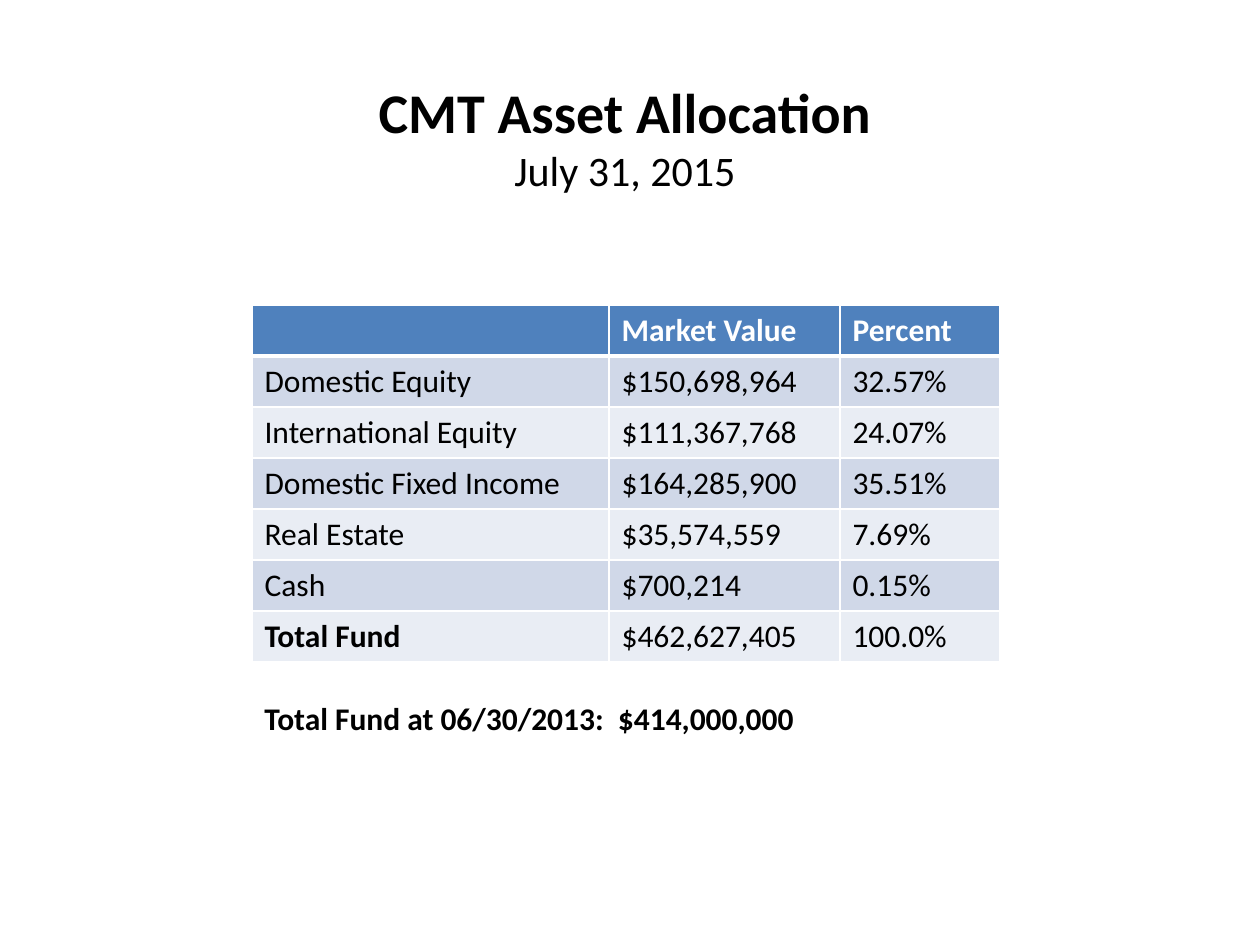
"""Build the CMT asset allocation slide with its title, fund table and closing total."""
from dataclasses import dataclass

from lxml import etree
from pptx import Presentation
from pptx.dml.color import RGBColor
from pptx.enum.text import MSO_ANCHOR, PP_ALIGN
from pptx.oxml.ns import qn
from pptx.util import Pt

CENTER = PP_ALIGN.CENTER
MIDDLE = MSO_ANCHOR.MIDDLE
PX = 914400 / 126


@dataclass(frozen=True)
class Theme:
    font: str = "Calibri"
    ink: str = "000000"
    white: str = "FFFFFF"
    header: str = "4F81BD"
    bands: tuple = ("D0D8E8", "E9EDF4")
    title_size: int = 32
    date_size: int = 24
    body_size: int = 18
    rule: int = 1
    header_rule: int = 3


THEME = Theme()


def px(*lengths):
    return [round(length * PX) for length in lengths]


def add_run(paragraph, text, size, color=THEME.ink, bold=False):
    run = paragraph.add_run()
    run.text = text
    run.font.name = THEME.font
    run.font.size = Pt(size)
    run.font.bold = bold
    run.font.color.rgb = RGBColor.from_string(color)


deck = Presentation()
deck.slide_width, deck.slide_height = px(1260, 945)
slide = deck.slides.add_slide(deck.slide_layouts[6])

heading = slide.shapes.add_textbox(*px(116, 63, 1018, 147)).text_frame
heading.word_wrap = True
heading.vertical_anchor = MIDDLE
heading_line = heading.paragraphs[0]
heading_line.alignment = CENTER
add_run(heading_line, "CMT Asset Allocation", THEME.title_size, bold=True)
heading_line.add_line_break()
add_run(heading_line, "July 31, 2015", THEME.date_size)

allocations = [
    ("", "Market Value", "Percent"),
    ("Domestic Equity", "$150,698,964", "32.57%"),
    ("International Equity", "$111,367,768", "24.07%"),
    ("Domestic Fixed Income", "$164,285,900", "35.51%"),
    ("Real Estate", "$35,574,559", "7.69%"),
    ("Cash", "$700,214", "0.15%"),
    ("Total Fund", "$462,627,405", "100.0%"),
]
column_widths = px(357, 231, 160)
row_height = 51
last_row = len(allocations) - 1

fund_table = slide.shapes.add_table(
    len(allocations), len(column_widths), *px(252, 305, 748, row_height * len(allocations))
).table
for column, width in zip(fund_table.columns, column_widths):
    column.width = width

for row, entries in enumerate(allocations):
    is_header = row == 0
    fill = THEME.header if is_header else THEME.bands[(row - 1) % 2]
    color = THEME.white if is_header else THEME.ink
    for col, entry in enumerate(entries):
        cell = fund_table.cell(row, col)
        cell_properties = cell._tc.get_or_add_tcPr()
        for side in ("lnL", "lnR", "lnT", "lnB"):
            under_header = (row, side) in ((0, "lnB"), (1, "lnT"))
            weight = THEME.header_rule if under_header else THEME.rule
            border = etree.SubElement(cell_properties, qn(f"a:{side}"), w=str(Pt(weight)))
            border_fill = etree.SubElement(border, qn("a:solidFill"))
            etree.SubElement(border_fill, qn("a:srgbClr"), val=THEME.white)
        cell.fill.solid()
        cell.fill.fore_color.rgb = RGBColor.from_string(fill)
        if entry:
            bold = is_header or (row == last_row and col == 0)
            add_run(cell.text_frame.paragraphs[0], entry, THEME.body_size, color, bold)

prior_total = slide.shapes.add_textbox(*px(252, 693, 735, 51)).text_frame
prior_total.word_wrap = True
add_run(prior_total.paragraphs[0], "Total Fund at 06/30/2013:  $414,000,000", THEME.body_size, bold=True)

deck.save("out.pptx")
